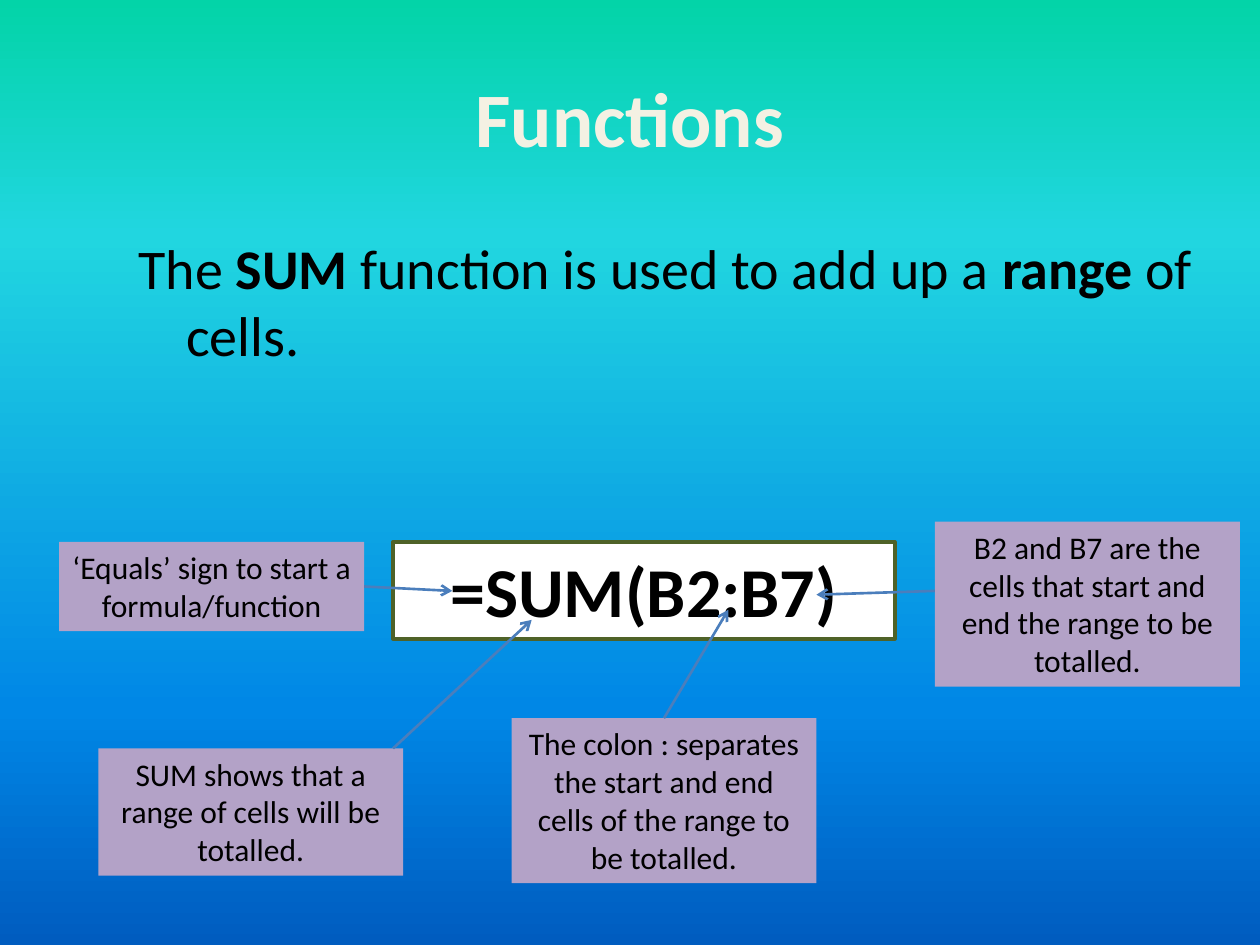
from pptx import Presentation
from pptx.dml.color import RGBColor
from pptx.enum.shapes import MSO_CONNECTOR as Link, MSO_SHAPE as Kind
from pptx.enum.text import MSO_ANCHOR as Anchor, MSO_AUTO_SIZE as Auto, PP_ALIGN as Align
from pptx.oxml import parse_xml
from pptx.oxml.ns import nsdecls, qn
from pptx.util import Pt

PX = 9144
NS = nsdecls("a")


def rgb(code):
    return RGBColor.from_string(code)


class Deck:
    face = "Calibri"
    ink = "000000"
    lilac = "B3A2C7"
    blue = "4B7EBC"

    def __init__(self, wide, high):
        self.show = Presentation()
        self.show.slide_width = wide * PX
        self.show.slide_height = high * PX
        self.slide = self.show.slides.add_slide(self.show.slide_layouts[6])

    def back(self, stops):
        fill = self.slide.background.fill
        fill.gradient()
        fill.gradient_angle = 270
        items = self.slide.element.find(".//" + qn("a:gsLst"))
        items.clear()
        for pos, code in stops:
            items.append(parse_xml(
                f'<a:gs {NS} pos="{pos * 1000}"><a:srgbClr val="{code}"/></a:gs>'))

    def style(self, para, size, color, bold=None, align=Align.CENTER):
        para.alignment = align
        font = para.font
        font.name, font.size, font.bold = self.face, Pt(size), bold
        font.color.rgb = rgb(color)

    def area(self, box):
        frame = self.slide.shapes.add_textbox(*(n * PX for n in box)).text_frame
        frame.word_wrap = True
        return frame

    def title(self, box, text, color, edge):
        frame = self.area(box)
        frame.vertical_anchor = Anchor.MIDDLE
        para = frame.paragraphs[0]
        self.style(para, 44, color, True)
        run = para.add_run()
        run.text = text
        run.font.fill.solid()
        run.font.fill.fore_color.rgb = rgb(color)
        run.font._element.insert(0, parse_xml(
            f'<a:ln {NS} w="{Pt(1)}"><a:solidFill><a:srgbClr val="{edge}"/>'
            '</a:solidFill></a:ln>'))

    def body(self, box, parts, hang):
        para = self.area(box).paragraphs[0]
        self.style(para, 32, self.ink, align=Align.LEFT)
        para.space_before = Pt(6.4)
        props = para._p.get_or_add_pPr()
        props.set("marL", str(hang * PX))
        props.set("indent", str(-hang * PX))
        for text, bold in parts:
            run = para.add_run()
            run.text = text
            run.font.bold = bold

    def panel(self, box, text, size=18, fill=lilac, edge=None, bold=None):
        shape = self.slide.shapes.add_shape(Kind.RECTANGLE, *(n * PX for n in box))
        shape.shadow.inherit = False
        shape.fill.solid()
        shape.fill.fore_color.rgb = rgb(fill)
        if edge:
            shape.line.color.rgb = rgb(edge)
            shape.line.width = Pt(2.25)
        else:
            shape.line.fill.background()
        frame = shape.text_frame
        frame.word_wrap = True
        frame.auto_size = Auto.SHAPE_TO_FIT_TEXT
        frame.vertical_anchor = Anchor.TOP
        para = frame.paragraphs[0]
        para.text = text
        self.style(para, size, self.ink, bold)
        return shape

    def arrow(self, start, end, shape=None, side=0):
        line = self.slide.shapes.add_connector(
            Link.STRAIGHT, *(n * PX for n in start + end))
        if shape is not None:
            line.begin_connect(shape, side)
        line.line.color.rgb = rgb(self.blue)
        line.line.width = Pt(1.5)
        line.line._get_or_add_ln().append(parse_xml(f'<a:tailEnd {NS} type="arrow"/>'))
        line._element.spPr.append(parse_xml(f'<a:effectLst {NS}/>'))


def main():
    deck = Deck(1000, 750)
    deck.back([(0, "03D4A8"), (25, "21D6E0"), (75, "0087E6"), (100, "005CBF")])
    deck.title((50, 30, 900, 125), "Functions", "F4F1E3", "054697")
    deck.body((100, 180, 900, 495), [
        ("The ", False), ("SUM", True), (" function is used to add up a ", False),
        ("range", True), (" of cells.", False)], 38)
    deck.panel((312, 430, 398, 77), "=SUM(B2:B7)", 40, "FFFFFF", "4F6228", True)

    wide = 242
    equals = deck.panel((47, 430, wide, 71), "‘Equals’ sign to start a formula/function")
    deck.panel((78, 594, wide, 101), "SUM shows that a range of cells will be totalled.")
    deck.panel((742, 414, wide, 131),
               "B2 and B7 are the cells that start and end the range to be totalled.")
    colon = deck.panel(
        (406, 570, wide, 131),
        "The colon : separates the start and end cells of the range to be totalled.")

    deck.arrow((289, 465), (359, 469), equals, 3)
    deck.arrow((312, 594), (422, 492))
    deck.arrow((527, 570), (578, 484), colon, 0)
    deck.arrow((742, 469), (648, 472))
    deck.show.save("out.pptx")


if __name__ == "__main__":
    main()
